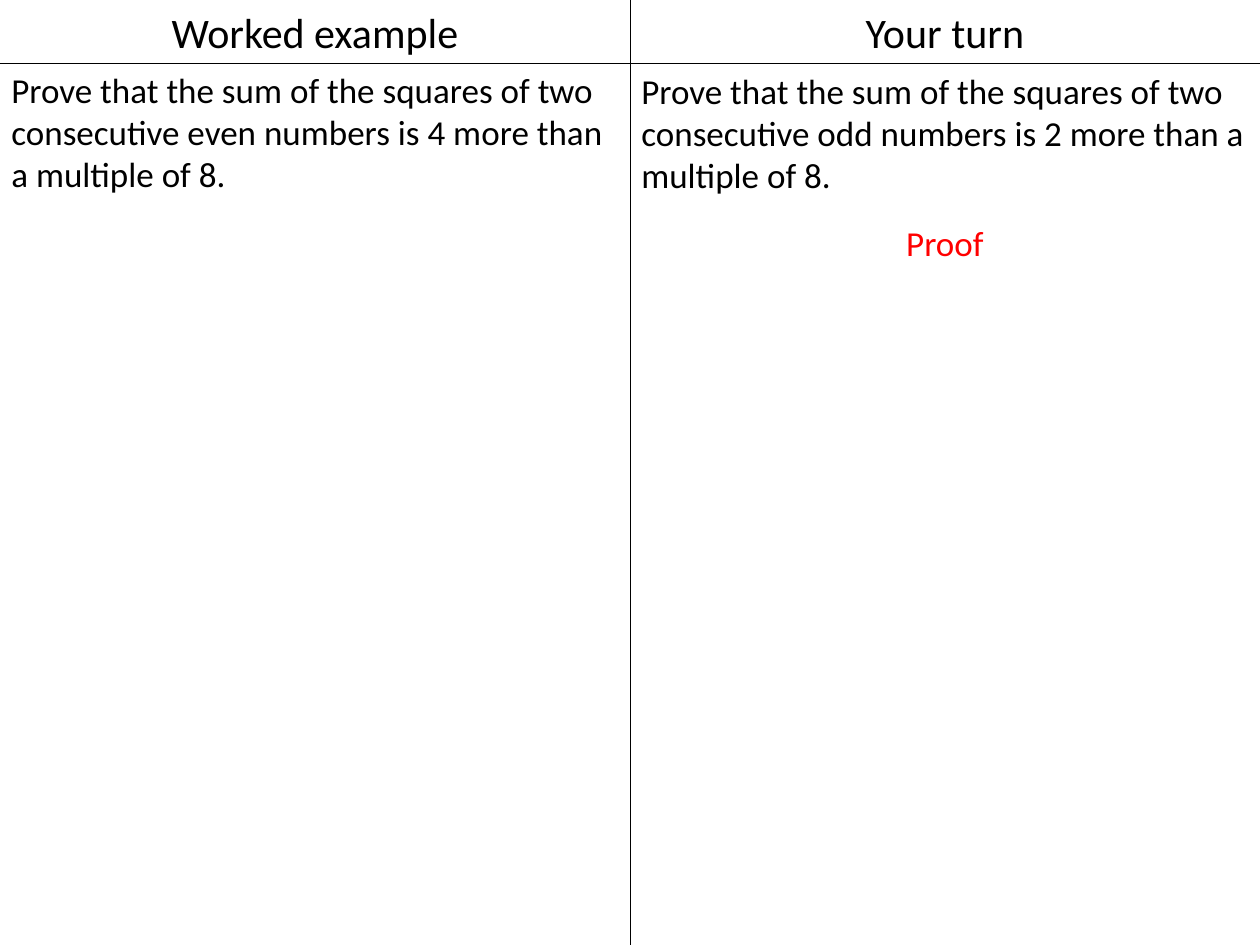
from dataclasses import dataclass

from lxml.etree import SubElement
from pptx import Presentation
from pptx.dml.color import RGBColor
from pptx.enum.shapes import MSO_CONNECTOR
from pptx.enum.text import MSO_AUTO_SIZE, PP_ALIGN
from pptx.oxml.ns import qn
from pptx.util import Cm, Pt


@dataclass(frozen=True)
class Theme:
    """Hold the colours, font and sizes of the slide."""
    ink: RGBColor = RGBColor(0, 0, 0)
    key: RGBColor = RGBColor(255, 0, 0)
    font: str = "Calibri"
    head: Pt = Pt(24)
    body: Pt = Pt(20)
    rule: Pt = Pt(0.5)


LOOK = Theme()
WIDE, HIGH = 25.4, 19.05
HALF, BAND = WIDE / 2, 1.27


def style(item, form):
    """Set each format value on the item."""
    for name, value in form.items():
        setattr(item, name, value)


def add_rule(slide, *ends):
    """Draw a thin straight line between two points."""
    rule = slide.shapes.add_connector(MSO_CONNECTOR.STRAIGHT, *map(Cm, ends))
    rule.line.color.rgb = LOOK.ink
    rule.line.width = LOOK.rule
    SubElement(rule._element.spPr, qn("a:effectLst"))


def add_text(slide, words, left, top, high, size, tint=LOOK.ink, align=PP_ALIGN.CENTER):
    """Place one paragraph in a box half a slide wide."""
    box = slide.shapes.add_textbox(Cm(left), Cm(top), Cm(HALF), Cm(high))
    frame = box.text_frame
    style(frame, {"word_wrap": True, "auto_size": MSO_AUTO_SIZE.SHAPE_TO_FIT_TEXT})
    para = frame.paragraphs[0]
    para.alignment = align
    run = para.add_run()
    run.text = words
    style(run.font, {"name": LOOK.font, "size": size})
    run.font.color.rgb = tint


def main():
    """Build the two-column slide and save it."""
    deck = Presentation()
    style(deck, {"slide_width": Cm(WIDE), "slide_height": Cm(HIGH)})
    slide = deck.slides.add_slide(deck.slide_layouts[6])
    add_rule(slide, 0, BAND, WIDE, BAND)
    add_rule(slide, HALF, 0, HALF, HIGH)
    tasks = [
        ("Worked example", "even numbers is 4", 1.25),
        ("Your turn", "odd numbers is 2", 1.27),
    ]
    for col, (head, case, top) in enumerate(tasks):
        left = col * HALF
        add_text(slide, head, left, 0, BAND, LOOK.head)
        task = f"Prove that the sum of the squares of two consecutive {case} more than a multiple of 8."
        add_text(slide, task, left - 0.02, top, 2.82, LOOK.body, align=PP_ALIGN.LEFT)
    add_text(slide, "Proof", HALF, 4.34, 1.11, LOOK.body, LOOK.key)
    deck.save("out.pptx")


if __name__ == "__main__":
    main()
